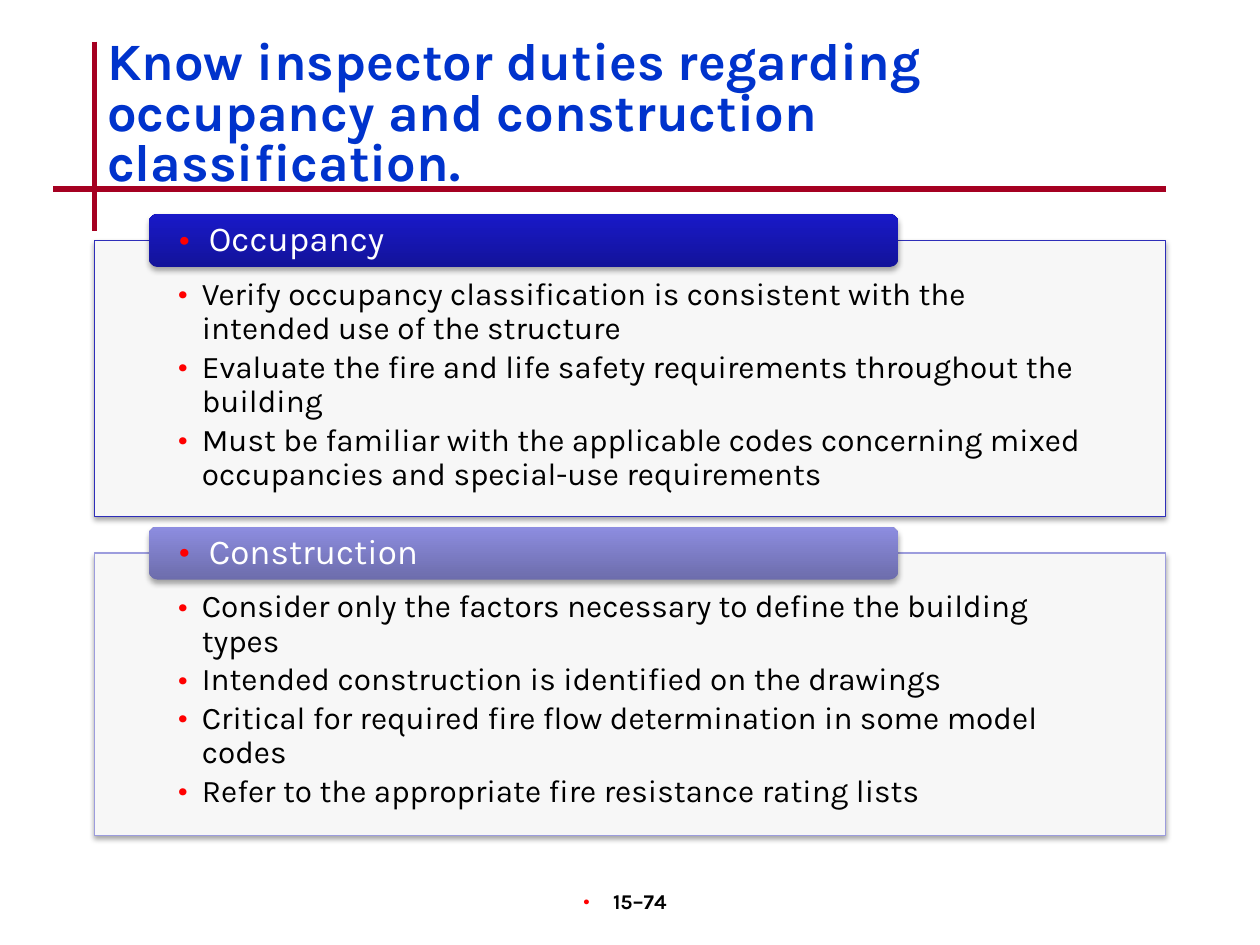
import lxml.etree
import pptx
import pptx.dml.color
import pptx.enum.shapes
import pptx.enum.text
import pptx.oxml.ns
import pptx.util

Cm = pptx.util.Cm
Pt = pptx.util.Pt
RGB = pptx.dml.color.RGBColor.from_string
qn = pptx.oxml.ns.qn
Align = pptx.enum.text.PP_ALIGN
Anchor = pptx.enum.text.MSO_ANCHOR
Shape = pptx.enum.shapes.MSO_SHAPE

THEME = {
    "font": "Karla",
    "title": "0033CC", "rule": "A50021", "bullet": "FF0000",
    "text": "000000", "heading": "FFFFFF", "panel": "F7F7F7",
    "title_size": 30, "heading_size": 20, "body_size": 18, "number_size": 12,
}


def format_paragraph(paragraph, size, color, bold=False, hanging=None):
    if hanging is not None:
        properties = paragraph._p.get_or_add_pPr()
        properties.set("marL", str(hanging))
        properties.set("indent", str(-hanging))
        bullet_color = lxml.etree.SubElement(properties, qn("a:buClr"))
        lxml.etree.SubElement(bullet_color, qn("a:srgbClr"), val=THEME["bullet"])
        lxml.etree.SubElement(properties, qn("a:buSzPct"), val="110000")
        lxml.etree.SubElement(properties, qn("a:buFont"), typeface=THEME["font"])
        lxml.etree.SubElement(properties, qn("a:buChar"), char="•")
    for run in paragraph.runs:
        run.font.name = THEME["font"]
        run.font.size = Pt(THEME[size])
        run.font.bold = bold
        run.font.color.rgb = RGB(THEME[color])


def add_shadowed_shape(kind, left, top, width, height):
    shape = slide.shapes.add_shape(kind, left, top, width, height)
    shape.shadow.inherit = False
    effects = shape._element.spPr.find(qn("a:effectLst"))
    shadow = lxml.etree.SubElement(
        effects, qn("a:outerShdw"), blurRad=str(Pt(3.1)), dist=str(Pt(1.8)),
        dir="5400000", rotWithShape="0")
    shadow_color = lxml.etree.SubElement(shadow, qn("a:srgbClr"), val="000000")
    lxml.etree.SubElement(shadow_color, qn("a:alpha"), val="35000")
    shape.text_frame.word_wrap = True
    return shape


presentation = pptx.Presentation()
presentation.slide_width = Cm(25.4)
presentation.slide_height = Cm(19.05)
slide = presentation.slides.add_slide(presentation.slide_layouts[6])

for x1, y1, x2, y2 in [(1.91, 0.84, 1.91, 4.65), (1.07, 3.81, 23.5, 3.81)]:
    rule = slide.shapes.add_connector(
        pptx.enum.shapes.MSO_CONNECTOR.STRAIGHT, Cm(x1), Cm(y1), Cm(x2), Cm(y2))
    rule.line.color.rgb = RGB(THEME["rule"])
    rule.line.width = Pt(3)
    lxml.etree.SubElement(rule._element.spPr, qn("a:effectLst"))

title = slide.shapes.add_textbox(Cm(1.91), Cm(0.69), Cm(21.59), Cm(2.54))
title.text_frame.word_wrap = True
title.text_frame.text = (
    "Know inspector duties regarding occupancy and construction classification.")
title.text_frame.paragraphs[0].line_spacing = 0.8
format_paragraph(title.text_frame.paragraphs[0], "title_size", "title", bold=True)

sections = [
    ("Occupancy", 4.85, 5.56, "2E2EB9", ("13139A", "1919C8"), [
        "Verify occupancy classification is consistent with the intended use of the structure",
        "Evaluate the fire and life safety requirements throughout the building",
        "Must be familiar with the applicable codes concerning mixed occupancies and special-use requirements",
    ]),
    ("Construction", 11.15, 5.69, "9C9CDD", ("6D6DAC", "8D8DE0"), [
        "Consider only the factors necessary to define the building types",
        "Intended construction is identified on the drawings",
        "Critical for required fire flow determination in some model codes",
        "Refer to the appropriate fire resistance rating lists",
    ]),
]
heading_height = 1.07

for name, top, height, outline, gradient, duties in sections:
    panel = add_shadowed_shape(Shape.RECTANGLE, Cm(1.91), Cm(top), Cm(21.59), Cm(height))
    panel.fill.solid()
    panel.fill.fore_color.rgb = RGB(THEME["panel"])
    panel.line.color.rgb = RGB(outline)
    panel.line.width = Pt(0.75)
    frame = panel.text_frame
    frame.vertical_anchor = Anchor.TOP
    frame.margin_left = frame.margin_right = Cm(1.68)
    frame.margin_top = Cm(0.76)
    frame.margin_bottom = Cm(0.36)
    frame.text = "\n".join(duties)
    for paragraph in frame.paragraphs:
        format_paragraph(paragraph, "body_size", "text", hanging=Cm(0.48))
        paragraph.alignment = Align.LEFT
        paragraph.line_spacing = 0.9
        paragraph.space_after = Pt(2.7)

    heading = add_shadowed_shape(
        Shape.ROUNDED_RECTANGLE, Cm(3), Cm(top - heading_height / 2),
        Cm(15.11), Cm(heading_height))
    heading.fill.gradient()
    heading.fill.gradient_angle = 90
    for stop, color in zip(heading.fill.gradient_stops, gradient):
        stop.color.rgb = RGB(color)
    heading.line.fill.background()
    frame = heading.text_frame
    frame.vertical_anchor = Anchor.MIDDLE
    frame.margin_left = frame.margin_right = Cm(0.56)
    frame.margin_top = frame.margin_bottom = 0
    frame.text = name
    format_paragraph(frame.paragraphs[0], "heading_size", "heading", hanging=Cm(0.6))
    frame.paragraphs[0].alignment = Align.LEFT
    frame.paragraphs[0].line_spacing = 0.9

number = slide.shapes.add_textbox(Cm(9.96), Cm(17.78), Cm(5.28), Cm(1.27))
number.text_frame.word_wrap = True
number.text_frame.text = "15–74"
format_paragraph(
    number.text_frame.paragraphs[0], "number_size", "text", bold=True, hanging=Cm(0.6))
number.text_frame.paragraphs[0].alignment = Align.CENTER

presentation.save("out.pptx")
